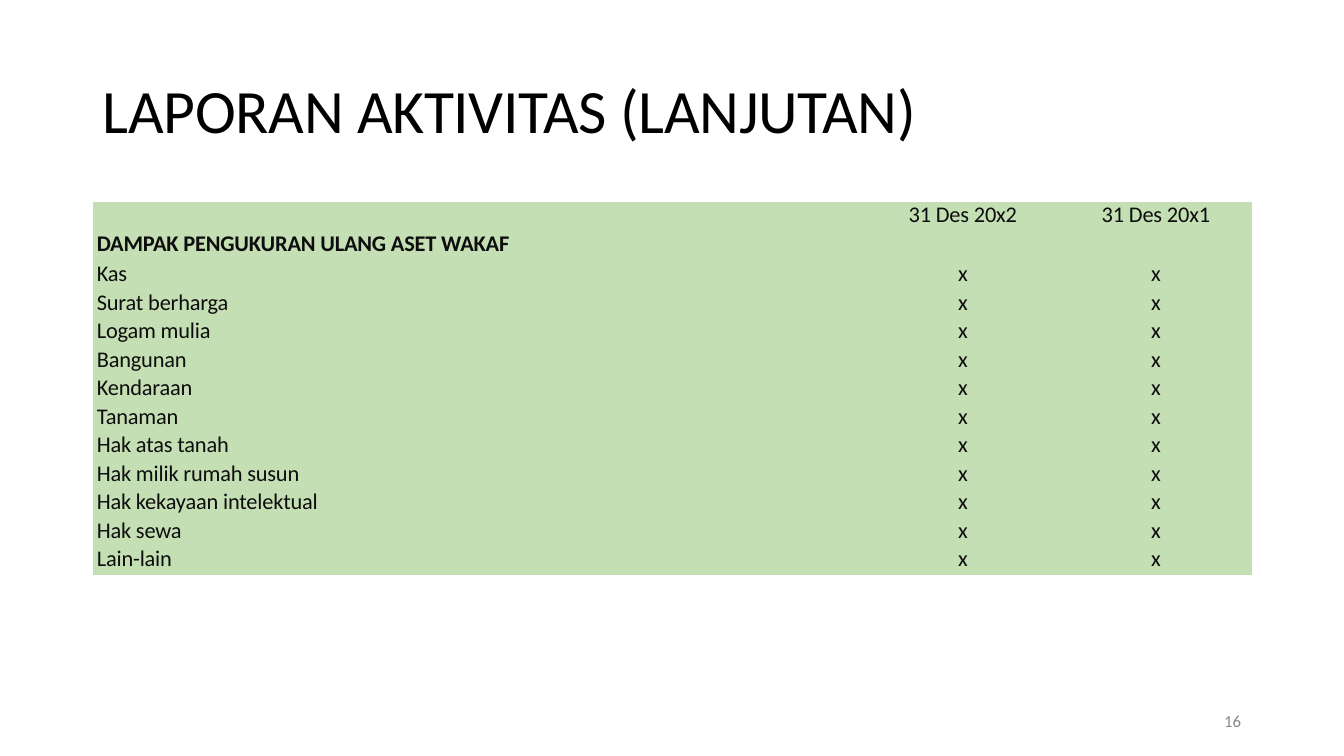
from pptx import Presentation
from pptx.dml.color import RGBColor
from pptx.enum import text
from pptx.util import Inches, Pt

# Content
TITLE = "LAPORAN AKTIVITAS (LANJUTAN)"
PAGE_NUMBER = "16"
PERIODS = ("31 Des 20x2", "31 Des 20x1")
SECTION = "DAMPAK PENGUKURAN ULANG ASET WAKAF"
ASSETS = [
    "Kas", "Surat berharga", "Logam mulia", "Bangunan", "Kendaraan", "Tanaman",
    "Hak atas tanah", "Hak milik rumah susun", "Hak kekayaan intelektual",
    "Hak sewa", "Lain-lain",
]
ROWS = [("", *PERIODS), (SECTION, "", "")] + [(asset, "x", "x") for asset in ASSETS]

# Look
COLORS = {"title": "000000", "text": "0D0D0D", "page": "888888", "table": "C5DFB4"}
FONT = "Calibri"
LEFT, WIDTH = 0.92, 11.5
TABLE_TOP, TABLE_HEIGHT = 2, 3.68
HEADER_HEIGHT, LAST_HEIGHT = 0.31, 0.26
COLUMN_WIDTHS = (5.43, 4.16, 1.91)
COLUMN_INDENTS = (0.04, 2.24, 0)
NO_STYLE = "{2D5ABB26-0587-4C30-8999-92F81FD0307C}"


def write(frame, words, size=16, color="text", bold=False, align="LEFT",
          spacing=None, indent=0, before=0, tracking=0):
    """Put one formatted paragraph in a text frame; tracking is in 1/100 pt."""
    paragraph = frame.paragraphs[0]
    paragraph.alignment = getattr(text.PP_ALIGN, align)
    paragraph.space_before = Pt(before)
    if spacing:
        paragraph.line_spacing = spacing
    properties = paragraph._p.get_or_add_pPr()
    properties.set("marL", str(Inches(indent)))
    properties.set("indent", "0")
    if words:
        run = paragraph.add_run()
        run.text = words
        run.font.name, run.font.size, run.font.bold = FONT, Pt(size), bold
        run.font.color.rgb = RGBColor.from_string(COLORS[color])
        run._r.get_or_add_rPr().set("spc", str(tracking))


def clear_margins(box):
    box.margin_left = box.margin_right = box.margin_top = box.margin_bottom = 0


presentation = Presentation()
presentation.slide_width, presentation.slide_height = Inches(13.33), Inches(7.5)
slide = presentation.slides.add_slide(presentation.slide_layouts[5])

# Title
title = slide.shapes.title
title.left, title.top = Inches(LEFT), Inches(0.4)
title.width, title.height = Inches(WIDTH), Inches(1.45)
title.text_frame.auto_size = text.MSO_AUTO_SIZE.NONE
title.text_frame.vertical_anchor = text.MSO_ANCHOR.MIDDLE
write(title.text_frame, TITLE, size=44, color="title", spacing=0.9, tracking=-25)

# Table
graphic = slide.shapes.add_table(
    len(ROWS), len(COLUMN_WIDTHS), Inches(LEFT), Inches(TABLE_TOP),
    Inches(WIDTH), Inches(TABLE_HEIGHT))
table = graphic.table
table.first_row = table.horz_banding = False
table._tbl.tblPr.find("{*}tableStyleId").text = NO_STYLE
for column, width in zip(table.columns, COLUMN_WIDTHS):
    column.width = Inches(width)

middle_height = (TABLE_HEIGHT - HEADER_HEIGHT - LAST_HEIGHT) / (len(ROWS) - 2)
heights = [HEADER_HEIGHT] + [middle_height] * (len(ROWS) - 2) + [LAST_HEIGHT]
for row_index, (values, height) in enumerate(zip(ROWS, heights)):
    table.rows[row_index].height = Inches(height)
    for column_index, value in enumerate(values):
        cell = table.cell(row_index, column_index)
        cell.fill.solid()
        cell.fill.fore_color.rgb = RGBColor.from_string(COLORS["table"])
        clear_margins(cell)
        is_period = value in PERIODS
        write(cell.text_frame, value, bold=value == SECTION,
              align="CENTER" if column_index else "LEFT",
              spacing=None if is_period else Pt(17.4),
              before=0.1 if is_period else 0,
              indent=COLUMN_INDENTS[column_index],
              tracking=0 if value == "x" else -10)

# Page number
page = slide.shapes.add_textbox(Inches(12.1), Inches(7.07), Inches(0.25), Inches(0.19))
clear_margins(page.text_frame)
page.text_frame.word_wrap = True
page.text_frame.vertical_anchor = text.MSO_ANCHOR.MIDDLE
write(page.text_frame, PAGE_NUMBER, size=12, color="page", spacing=Pt(12.4), indent=0.04)

presentation.save("out.pptx")
